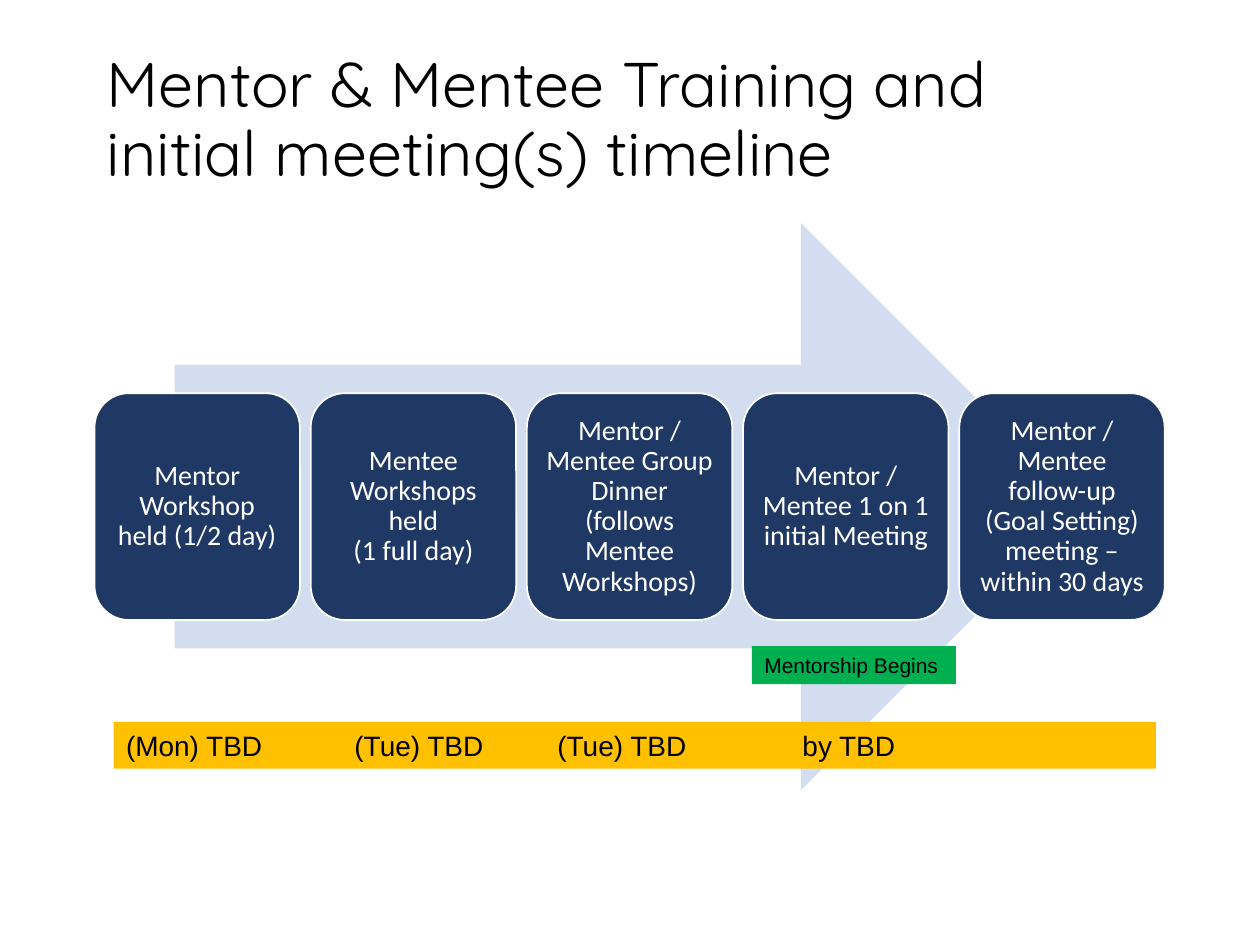
from lxml.etree import SubElement
from pptx import Presentation
from pptx.dml.color import RGBColor
from pptx.enum.shapes import MSO_SHAPE as Shape
from pptx.enum.text import MSO_ANCHOR as Anchor, PP_ALIGN as Align
from pptx.oxml.ns import qn
from pptx.util import Pt

STEPS = [
    "Mentor Workshop held (1/2 day)",
    "Mentee Workshops held\v(1 full day)",
    "Mentor / Mentee Group Dinner (follows Mentee Workshops)",
    "Mentor / Mentee 1 on 1 initial Meeting",
    "Mentor / Mentee follow-up (Goal Setting) meeting – within 30 days",
]
DATES = ["(Mon) TBD", "(Tue) TBD", "(Tue) TBD", "by TBD"]
DATE_STOPS = [130.5, 246.5, 386.5]


def color(value):
    return RGBColor.from_string(value)


def apply(target, values):
    for name, value in values.items():
        setattr(target, name, value)


def add_box(slide, kind, box, fill, line=None):
    shape = slide.shapes.add_shape(kind, *map(Pt, box))
    shape.shadow.inherit = False
    shape.fill.solid()
    shape.fill.fore_color.rgb = color(fill)
    if line:
        shape.line.color.rgb = color(line)
        shape.line.width = Pt(1)
    else:
        shape.line.fill.background()
    return shape


def write(shape, text, font, size, ink, align=Align.LEFT, anchor=Anchor.TOP,
          spacing=1.0, inset=(7.2, 3.6)):
    side, end = map(Pt, inset)
    frame = shape.text_frame
    apply(frame, {"word_wrap": True, "vertical_anchor": anchor,
                  "margin_left": side, "margin_right": side,
                  "margin_top": end, "margin_bottom": end})
    paragraph = frame.paragraphs[0]
    paragraph.text = text
    apply(paragraph, {"alignment": align, "line_spacing": spacing})
    for run in paragraph.runs:
        apply(run.font, {"name": font, "size": Pt(size)})
        run.font.color.rgb = color(ink)
    return paragraph


def add_title(slide, box):
    title = slide.shapes.add_textbox(*map(Pt, box))
    write(title, "Mentor & Mentee Training and initial meeting(s) timeline",
          "Quicksand", 36, "000000", anchor=Anchor.MIDDLE, spacing=0.9)


def add_process(slide, box):
    left, top, width, height = box
    # Background arrow, 85% of the width and centred
    add_box(slide, Shape.RIGHT_ARROW,
            (left + width * 0.075, top, width * 0.85, height), "D2DEEF")
    # Step cards, 40% of the height and centred
    gap = 6.15
    card_width = (width - gap * (len(STEPS) - 1)) / len(STEPS)
    for index, step in enumerate(STEPS):
        card = add_box(slide, Shape.ROUNDED_RECTANGLE,
                       (left + index * (card_width + gap), top + height * 0.3,
                        card_width, height * 0.4), "203864", "FFFFFF")
        write(card, step, "Calibri", 16, "FFFFFF", Align.CENTER,
              Anchor.MIDDLE, 0.9, (5, 5))


def add_dates(slide, box):
    bar = add_box(slide, Shape.RECTANGLE, box, "FFC000")
    paragraph = write(bar, "\t".join(DATES), "Arial", 16, "000000")
    # Tab stops line the dates up below their steps
    stops = SubElement(paragraph._p.get_or_add_pPr(), qn("a:tabLst"))
    for stop in DATE_STOPS:
        SubElement(stops, qn("a:tab"), pos=str(int(Pt(stop))), algn="l")


def add_milestone(slide, box):
    label = add_box(slide, Shape.RECTANGLE, box, "00B050")
    write(label, "Mentorship Begins", "Arial", 12, "000000")


def main():
    presentation = Presentation()
    apply(presentation, {"slide_width": Pt(720), "slide_height": Pt(540)})
    slide = presentation.slides.add_slide(presentation.slide_layouts[6])
    add_title(slide, (54, 24.5, 612, 90))
    add_process(slide, (54, 127.5, 611.6, 324))
    add_dates(slide, (65, 412.5, 595.5, 26.7))
    add_milestone(slide, (429.7, 369.2, 116.6, 21.8))
    presentation.save("out.pptx")


if __name__ == "__main__":
    main()
